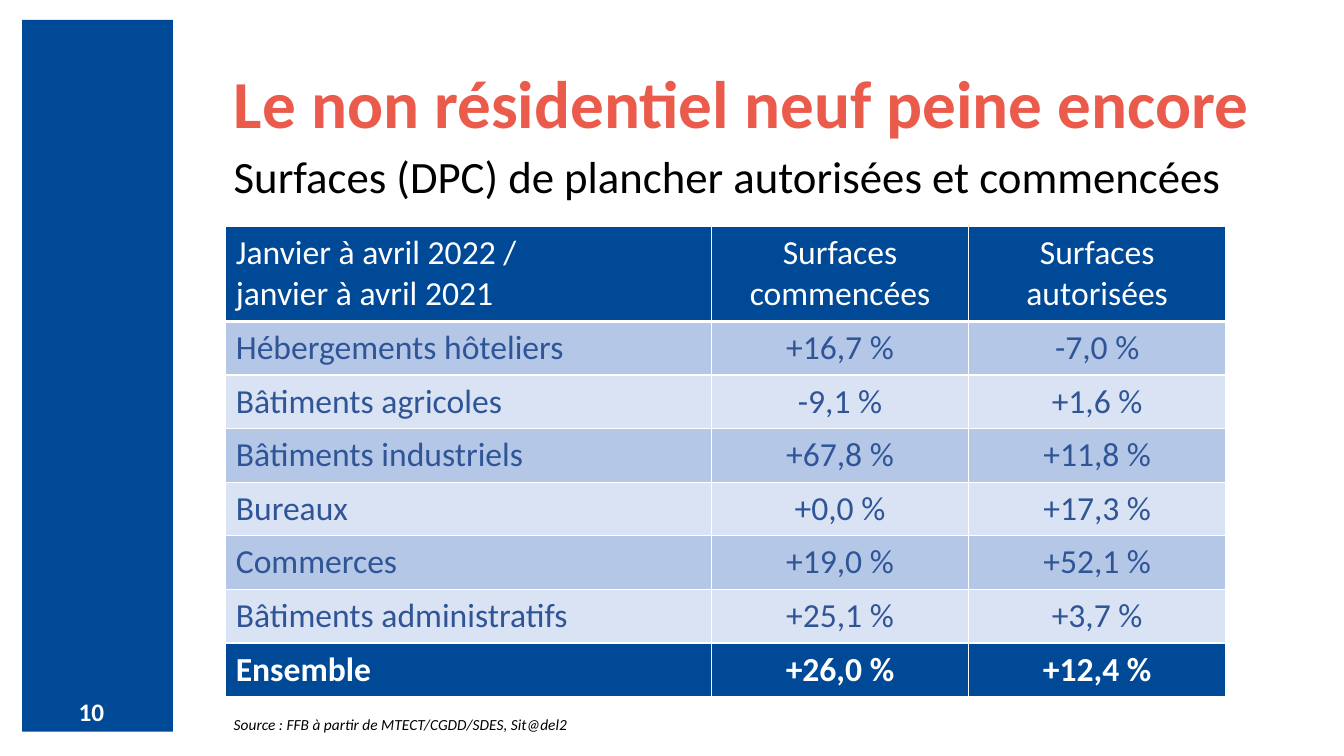
from dataclasses import dataclass

from lxml.etree import SubElement
from pptx import Presentation
from pptx.dml.color import RGBColor as RGB
from pptx.enum.shapes import MSO_SHAPE as SHAPE
from pptx.enum.text import MSO_ANCHOR as ANCHOR, PP_ALIGN as ALIGN
from pptx.oxml.ns import qn
from pptx.util import Cm, Pt


@dataclass(frozen=True)
class Theme:
    font: str = "Calibri"
    blue: str = "004996"
    coral: str = "EB5B4C"
    white: str = "FFFFFF"
    black: str = "000000"
    body: str = "2F5597"
    bands: tuple = ("B4C7E7", "DAE3F3")
    title: int = 48
    subtitle: int = 32
    table: int = 24
    number: int = 18
    source: int = 11


T = Theme()
LEFT = 5.64

HEADER = ("Janvier à avril 2022 /\njanvier à avril 2021",
          "Surfaces commencées", "Surfaces autorisées")
SECTORS = [
    ("Hébergements hôteliers", "+16,7 %", "-7,0 %"),
    ("Bâtiments agricoles", "-9,1 %", "+1,6 %"),
    ("Bâtiments industriels", "+67,8 %", "+11,8 %"),
    ("Bureaux", "+0,0 %", "+17,3 %"),
    ("Commerces", "+19,0 %", "+52,1 %"),
    ("Bâtiments administratifs", "+25,1 %", "+3,7 %"),
]
TOTAL = ("Ensemble", "+26,0 %", "+12,4 %")


def style(p, size, color, bold=False, italic=False):
    f = p.font
    f.name, f.size, f.bold, f.italic = T.font, Pt(size), bold, italic
    f.color.rgb = RGB.from_string(color)


def add_text(s, text, x, y, w, h, size, color, spacing=0.9, **font):
    tf = s.shapes.add_textbox(Cm(x), Cm(y), Cm(w), Cm(h)).text_frame
    tf.word_wrap = True
    p = tf.paragraphs[0]
    p.text = text
    p.line_spacing = spacing
    style(p, size, color, **font)


def add_band(s, x, y, w, h):
    sp = s.shapes.add_shape(SHAPE.RECTANGLE, Cm(x), Cm(y), Cm(w), Cm(h))
    sp.shadow.inherit = False
    sp.fill.solid()
    sp.fill.fore_color.rgb = RGB.from_string(T.blue)
    sp.line.fill.background()


def set_borders(cell, top, bottom):
    """Draw white cell borders; widths are in points."""
    tc_pr = cell._tc.get_or_add_tcPr()
    widths = {"a:lnL": 1, "a:lnR": 1, "a:lnT": top, "a:lnB": bottom}
    for i, (tag, width) in enumerate(widths.items()):
        ln = SubElement(tc_pr, qn(tag), w=str(Pt(width)))
        fill = SubElement(ln, qn("a:solidFill"))
        SubElement(fill, qn("a:srgbClr"), val=T.white)
        tc_pr.insert(i, ln)  # borders come before the cell fill


def add_surface_table(s, x, y, col_widths, header_height, row_height):
    rows = [HEADER, *SECTORS, TOTAL]
    last = len(rows) - 1
    heights = [header_height] + [row_height] * last
    # Width of each horizontal rule, from the table's top to its bottom
    rules = [1, 3] + [1] * (last - 2) + [2.25, 1]

    table = s.shapes.add_table(len(rows), len(col_widths), Cm(x), Cm(y),
                               Cm(sum(col_widths)), Cm(sum(heights))).table
    for col, width in zip(table.columns, col_widths):
        col.width = Cm(width)
    for i, values in enumerate(rows):
        table.rows[i].height = Cm(heights[i])
        strong = i in (0, last)
        fill = T.blue if strong else T.bands[(i - 1) % 2]
        color = T.white if strong else T.body
        for j, value in enumerate(values):
            cell = table.cell(i, j)
            cell.text = value
            cell.vertical_anchor = ANCHOR.MIDDLE
            cell.fill.solid()
            cell.fill.fore_color.rgb = RGB.from_string(fill)
            set_borders(cell, rules[i], rules[i + 1])
            for p in cell.text_frame.paragraphs:
                p.alignment = ALIGN.CENTER if j else ALIGN.LEFT
                style(p, T.table, color, bold=i == last)


def main():
    prs = Presentation()
    prs.slide_width, prs.slide_height = Cm(33.87), Cm(19.05)
    s = prs.slides.add_slide(prs.slide_layouts[6])

    # Side band with the slide number
    add_band(s, 0.56, 0.5, 3.8, 17.94)
    add_text(s, "10", 1.73, 17.42, 1.42, 1.02, T.number, T.white,
             spacing=1.0, bold=True)

    # Headings
    add_text(s, "Le non résidentiel neuf peine encore",
             LEFT, 1.65, 27.08, 2.11, T.title, T.coral, bold=True)
    add_text(s, "Surfaces (DPC) de plancher autorisées et commencées",
             LEFT, 3.78, 26.52, 1.27, T.subtitle, T.black)

    # Table and its source
    add_surface_table(s, LEFT + 0.05, 5.7, (12.24, 6.48, 6.48), 2.4, 1.35)
    add_text(s, "Source : FFB à partir de MTECT/CGDD/SDES, Sit@del2",
             LEFT, 17.96, 9.88, 0.61, T.source, T.black, italic=True)

    prs.save("out.pptx")


if __name__ == "__main__":
    main()
